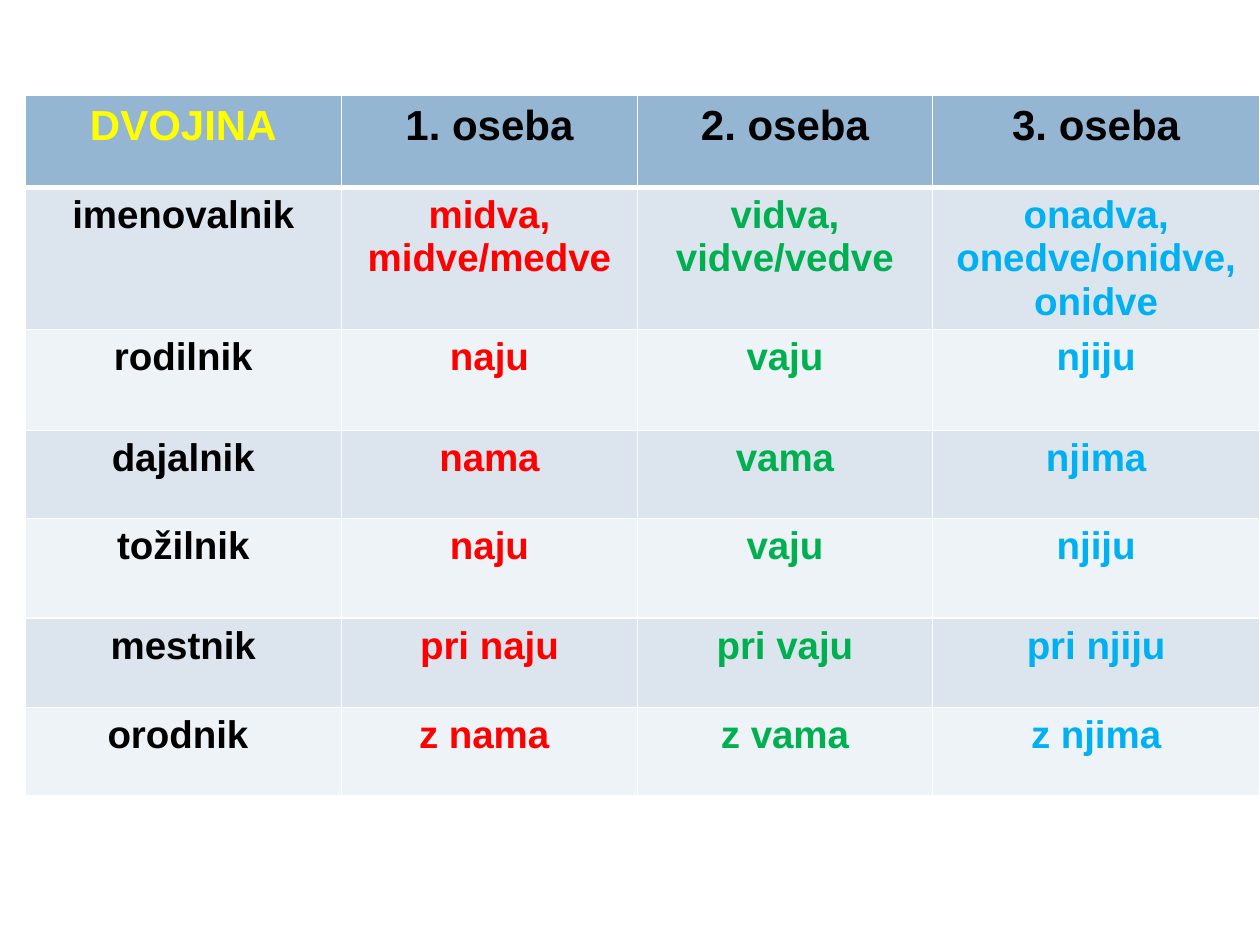
import dataclasses
import pptx
import pptx.dml.color
import pptx.enum.text
import pptx.oxml
import pptx.oxml.ns
import pptx.util


@dataclasses.dataclass(frozen=True)
class Theme:
    font: str = "Arial"
    head_size: int = 24
    body_size: int = 22
    head_fill: str = "94B6D2"
    bands: tuple = ("DCE5EE", "EEF3F7")
    rule: str = "FFFFFF"
    thin: int = 1
    thick: int = 3
    head_ink: tuple = ("FFFF00", "000000", "000000", "000000")
    body_ink: tuple = ("000000", "FF0000", "00B050", "00B0F0")


THEME = Theme()
UNIT = pptx.util.Inches(0.1)
SLIDE = (100, 75)
BOX = (2, 7.6, 98, 53.6)
COLS = (25.1, 23.5, 23.4, 26)
ROWS = (7.3, 9.3, 8, 7, 7.9, 7.1, 7)
CASES = (
    ("DVOJINA", "1. oseba", "2. oseba", "3. oseba"),
    ("imenovalnik", "midva,\nmidve/medve", "vidva,\nvidve/vedve",
     "onadva,\nonedve/onidve,\nonidve"),
    ("rodilnik", "naju", "vaju", "njiju"),
    ("dajalnik", "nama", "vama", "njima"),
    ("tožilnik", "naju", "vaju", "njiju"),
    ("mestnik", "pri naju", "pri vaju", "pri njiju"),
    ("orodnik ", "z nama ", "z vama", "z njima"),
)


def scale(size):
    return pptx.util.Emu(round(size * UNIT))


def color(code):
    return pptx.dml.color.RGBColor.from_string(code)


def border(cell, widths):
    props = cell._tc.get_or_add_tcPr()
    space = pptx.oxml.ns.nsdecls("a")
    for spot, (side, width) in enumerate(zip("LRTB", widths)):
        line = pptx.oxml.parse_xml(
            f'<a:ln{side} {space} w="{pptx.util.Pt(width)}">'
            f'<a:solidFill><a:srgbClr val="{THEME.rule}"/></a:solidFill>'
            f'</a:ln{side}>')
        props.insert(spot, line)


def write(cell, text, size, ink):
    frame = cell.text_frame
    for index, words in enumerate(text.split("\n")):
        para = frame.add_paragraph() if index else frame.paragraphs[0]
        para.alignment = pptx.enum.text.PP_ALIGN.CENTER
        run = para.add_run()
        run.text = words
        run.font.name = THEME.font
        run.font.size = pptx.util.Pt(size)
        run.font.bold = True
        run.font.color.rgb = color(ink)


def paint(cell, row, col, text):
    head = row == 0
    top = THEME.thick if row == 1 else THEME.thin
    base = THEME.thick if head else THEME.thin
    fill = THEME.head_fill if head else THEME.bands[(row - 1) % 2]
    size = THEME.head_size if head else THEME.body_size
    ink = (THEME.head_ink if head else THEME.body_ink)[col]
    cell.fill.solid()
    cell.fill.fore_color.rgb = color(fill)
    border(cell, (THEME.thin, THEME.thin, top, base))
    write(cell, text, size, ink)


def add_cases(slide, box):
    left, top, width, height = map(scale, box)
    table = slide.shapes.add_table(
        len(ROWS), len(COLS), left, top, width, height).table
    for col, share in zip(table.columns, COLS):
        col.width = round(width * share / sum(COLS))
    for row, share in zip(table.rows, ROWS):
        row.height = round(height * share / sum(ROWS))
    for row, texts in enumerate(CASES):
        for col, text in enumerate(texts):
            paint(table.cell(row, col), row, col, text)


def main():
    deck = pptx.Presentation()
    deck.slide_width, deck.slide_height = map(scale, SLIDE)
    slide = deck.slides.add_slide(deck.slide_layouts[6])
    add_cases(slide, BOX)
    deck.save("out.pptx")


if __name__ == "__main__":
    main()
